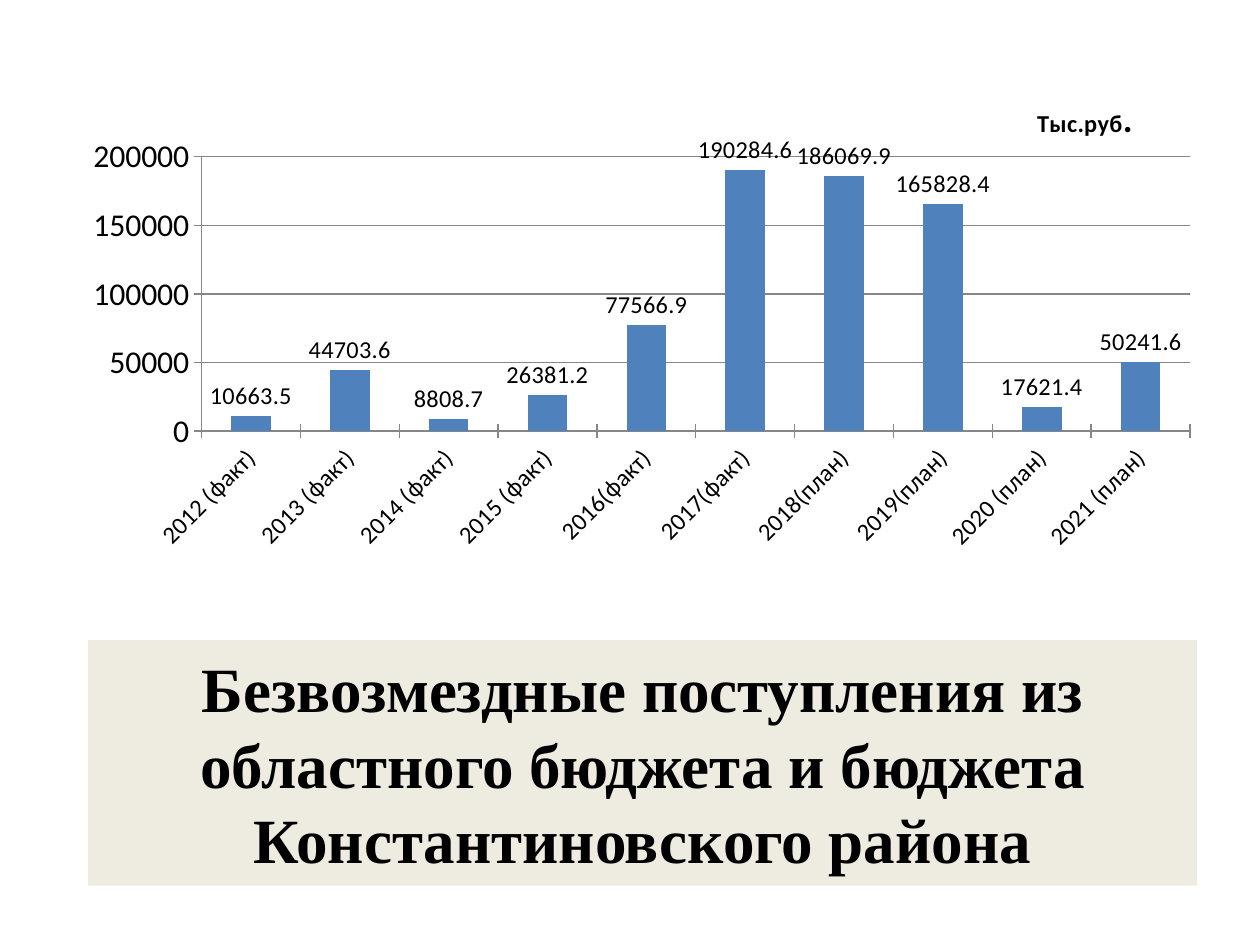
from lxml import etree
from pptx import Presentation
from pptx.chart.data import CategoryChartData
from pptx.dml.color import RGBColor
from pptx.enum.chart import XL_CHART_TYPE, XL_LABEL_POSITION, XL_TICK_MARK
from pptx.enum.text import MSO_ANCHOR, PP_ALIGN
from pptx.oxml.ns import qn
from pptx.util import Inches, Pt

COLUMNS = XL_CHART_TYPE.COLUMN_CLUSTERED
OUTSIDE_END = XL_LABEL_POSITION.OUTSIDE_END
CROSS = XL_TICK_MARK.CROSS
BLACK = RGBColor(0x00, 0x00, 0x00)
GREY = RGBColor(0x86, 0x86, 0x86)
BLUE = RGBColor(0x4F, 0x81, 0xBD)
BEIGE = RGBColor(0xEE, 0xEC, 0xE1)

TRANSFERS = {
    "2012 (факт)": 10663.5,
    "2013 (факт)": 44703.6,
    "2014 (факт)": 8808.7,
    "2015 (факт)": 26381.2,
    "2016(факт)": 77566.9,
    "2017(факт)": 190284.6,
    "2018(план)": 186069.9,
    "2019(план)": 165828.4,
    "2020 (план)": 17621.4,
    "2021 (план)": 50241.6,
}


def set_layout(element, **settings):
    """Give a chart title or plot area a manual layout, in shares of the chart."""
    layout = element.find(qn("c:layout"))
    if layout is None:
        layout = etree.Element(qn("c:layout"))
        text = element.find(qn("c:tx"))
        element.insert(0 if text is None else element.index(text) + 1, layout)
    for child in list(layout):
        layout.remove(child)
    manual = etree.SubElement(layout, qn("c:manualLayout"))
    for tag, value in settings.items():
        etree.SubElement(manual, qn(f"c:{tag}")).set("val", str(value))


prs = Presentation()
prs.slide_width, prs.slide_height = Inches(10), Inches(7.5)
slide = prs.slides.add_slide(prs.slide_layouts[5])

# Heading
heading = slide.shapes.title
heading.left, heading.top = Inches(0.7), Inches(5.08)
heading.width, heading.height = Inches(8.8), Inches(1.95)
heading.fill.solid()
heading.fill.fore_color.rgb = BEIGE
heading.text_frame.text = "Безвозмездные поступления из областного бюджета и бюджета Константиновского района"
heading.text_frame.vertical_anchor = MSO_ANCHOR.MIDDLE
heading_line = heading.text_frame.paragraphs[0]
heading_line.alignment = PP_ALIGN.CENTER
heading_font = heading_line.runs[0].font
heading_font.name, heading_font.size, heading_font.bold = "Times New Roman", Pt(36), True
heading_font.color.rgb = BLACK

# Transfers by year
data = CategoryChartData()
data.categories = list(TRANSFERS)
data.add_series("Series 1", list(TRANSFERS.values()))
chart = slide.shapes.add_chart(
    COLUMNS, Inches(0.57), Inches(0.5), Inches(8.88), Inches(4.4), data
).chart
chart.has_legend = False
chart.font.name, chart.font.size = "Calibri", Pt(18.1)
chart.font.color.rgb = BLACK

# Unit of measure, with a larger full stop
unit = chart.chart_title.text_frame.paragraphs[0]
for text, size in (("Тыс.руб", 13.9), (".", 21)):
    part = unit.add_run()
    part.text = text
    part.font.name, part.font.size, part.font.bold = "Calibri", Pt(size), True
    part.font.color.rgb = BLACK
chart.chart_title.include_in_layout = False
title_xml = chart.chart_title._element
set_layout(title_xml, xMode="edge", yMode="edge", x=0.86, y=0.05)

plot_area = chart.plots[0]._element.getparent()
set_layout(plot_area, layoutTarget="inner", xMode="edge", yMode="edge",
           x=0.116, y=0.169, w=0.884, h=0.495)

# Axes
years, amounts = chart.category_axis, chart.value_axis
for axis in (years, amounts):
    axis.major_tick_mark = CROSS
    axis.format.line.color.rgb = GREY
years.tick_labels.font.size = Pt(14)
years._element.find(qn("c:txPr")).find(qn("a:bodyPr")).set("rot", "-2700000")
amounts.minimum_scale, amounts.maximum_scale, amounts.major_unit = 0, 200000, 50000
amounts.major_gridlines.format.line.color.rgb = GREY

# Columns and their values
plot = chart.plots[0]
plot.gap_width = 150
plot.vary_by_categories = False
columns = plot.series[0]
columns.format.fill.solid()
columns.format.fill.fore_color.rgb = BLUE
labels = columns.data_labels
labels.show_value = True
labels.position = OUTSIDE_END
labels.font.size = Pt(13.9)

prs.save("out.pptx")
